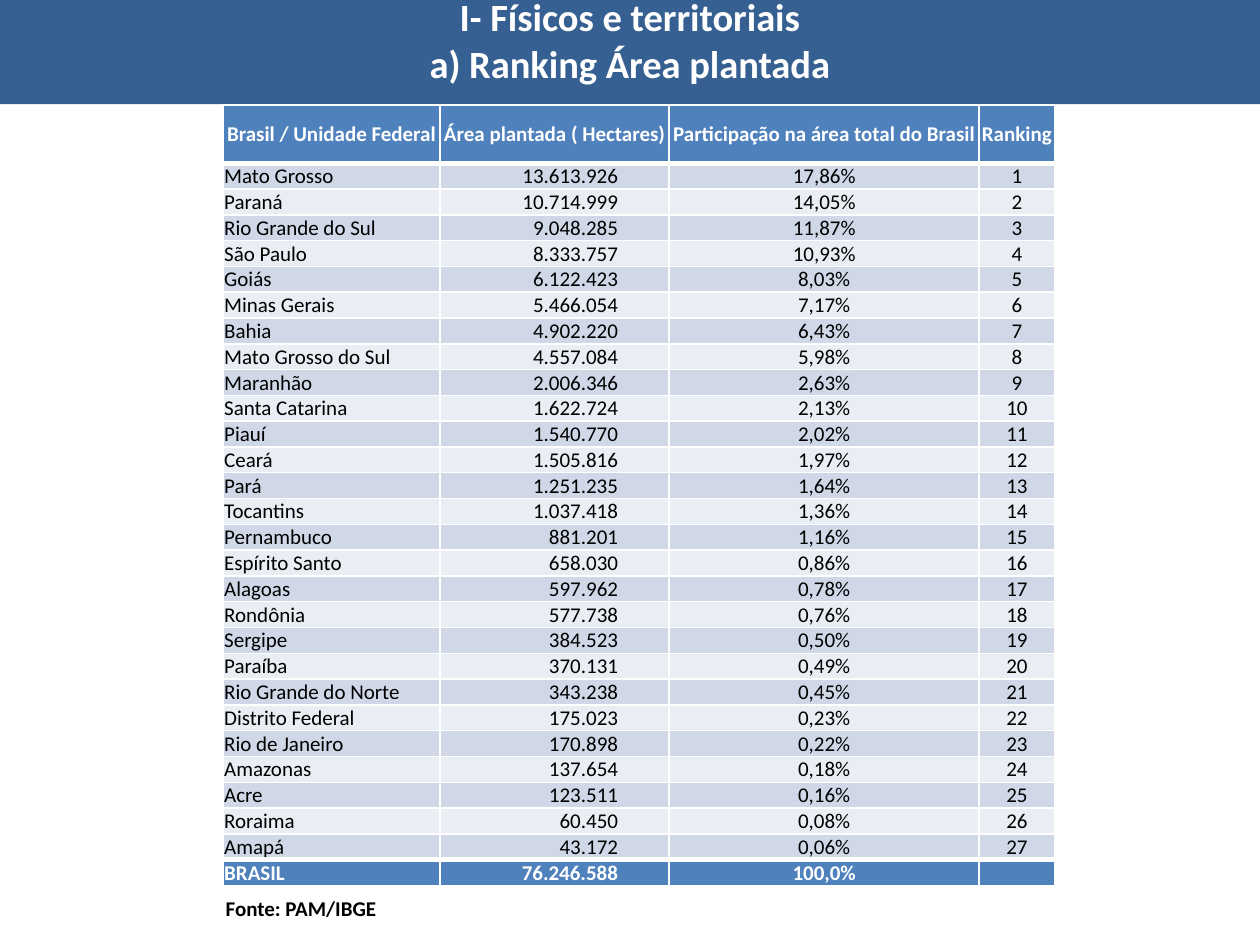
import lxml.etree
import pptx
import pptx.dml.color
import pptx.enum.shapes
import pptx.enum.text
import pptx.oxml.ns
import pptx.util

Cm = pptx.util.Cm
Pt = pptx.util.Pt
Align = pptx.enum.text.PP_ALIGN
Anchor = pptx.enum.text.MSO_ANCHOR
qn = pptx.oxml.ns.qn

colors = {
    "banner": "376092",
    "accent": "4F81BD",
    "odd": "D0D8E8",
    "even": "E9EDF4",
    "white": "FFFFFF",
    "black": "000000",
}

headers = ["Brasil / Unidade Federal", "Área plantada ( Hectares)",
           "Participação na área total do Brasil", "Ranking"]
states = [
    ("Mato Grosso", "13.613.926", "17,86%"),
    ("Paraná", "10.714.999", "14,05%"),
    ("Rio Grande do Sul", "9.048.285", "11,87%"),
    ("São Paulo", "8.333.757", "10,93%"),
    ("Goiás", "6.122.423", "8,03%"),
    ("Minas Gerais", "5.466.054", "7,17%"),
    ("Bahia", "4.902.220", "6,43%"),
    ("Mato Grosso do Sul", "4.557.084", "5,98%"),
    ("Maranhão", "2.006.346", "2,63%"),
    ("Santa Catarina", "1.622.724", "2,13%"),
    ("Piauí", "1.540.770", "2,02%"),
    ("Ceará", "1.505.816", "1,97%"),
    ("Pará", "1.251.235", "1,64%"),
    ("Tocantins", "1.037.418", "1,36%"),
    ("Pernambuco", "881.201", "1,16%"),
    ("Espírito Santo", "658.030", "0,86%"),
    ("Alagoas", "597.962", "0,78%"),
    ("Rondônia", "577.738", "0,76%"),
    ("Sergipe", "384.523", "0,50%"),
    ("Paraíba", "370.131", "0,49%"),
    ("Rio Grande do Norte", "343.238", "0,45%"),
    ("Distrito Federal", "175.023", "0,23%"),
    ("Rio de Janeiro", "170.898", "0,22%"),
    ("Amazonas", "137.654", "0,18%"),
    ("Acre", "123.511", "0,16%"),
    ("Roraima", "60.450", "0,08%"),
    ("Amapá", "43.172", "0,06%"),
]
rows = [headers]
rows += [[*state, str(rank)] for rank, state in enumerate(states, 1)]
rows.append(["BRASIL", "76.246.588", "100,0%", ""])


def write(frame, text, size, color, bold, alignment):
    para = frame.paragraphs[0]
    para.text = text
    para.alignment = alignment
    for span in para.runs:
        for name, value in {"name": "Calibri", "size": Pt(size), "bold": bold}.items():
            setattr(span.font, name, value)
        span.font.color.rgb = pptx.dml.color.RGBColor.from_string(colors[color])


def paint(fill, color):
    fill.solid()
    fill.fore_color.rgb = pptx.dml.color.RGBColor.from_string(colors[color])


deck = pptx.Presentation()
deck.slide_width = Cm(25.4)
deck.slide_height = Cm(19.05)
page = deck.slides.add_slide(deck.slide_layouts[6])

banner = page.shapes.add_shape(
    pptx.enum.shapes.MSO_SHAPE.RECTANGLE, Cm(0), Cm(-0.5), Cm(25.4), Cm(2.6))
banner.shadow.inherit = False
banner.line.fill.background()
paint(banner.fill, "banner")
banner.text_frame.vertical_anchor = Anchor.MIDDLE
write(banner.text_frame, "I- Físicos e territoriais\va) Ranking Área plantada",
      22, "white", True, Align.CENTER)

source_box = page.shapes.add_textbox(Cm(4.3), Cm(17.93), Cm(3.68), Cm(0.77))
source_box.text_frame.word_wrap = False
write(source_box.text_frame, "Fonte: PAM/IBGE", 12, "black", True, Align.LEFT)

table = page.shapes.add_table(
    len(rows), len(headers), Cm(4.5), Cm(2.12), Cm(16.76), Cm(15.73)).table
table.last_row = True
for column, width in zip(table.columns, [4.37, 4.62, 6.25, 1.52]):
    column.width = Cm(width)

last = len(rows) - 1
alignments = [Align.LEFT, Align.RIGHT, Align.CENTER, Align.CENTER]
for r, row in enumerate(rows):
    table.rows[r].height = Cm(0.52 if r else 1.17)
    strong = r in (0, last)
    fill_color = "accent" if strong else "odd" if r % 2 else "even"
    top = 3 if r in (1, last) else 1
    bottom = 3 if r in (0, last - 1) else 1
    for c, text in enumerate(row):
        cell = table.cell(r, c)
        is_area = c == 1 and r > 0
        layout = {
            "vertical_anchor": Anchor.MIDDLE,
            "margin_left": Cm(0.02),
            "margin_right": Cm(1.03 if is_area else 0.02),
            "margin_top": Cm(0.01),
            "margin_bottom": Cm(0),
        }
        for name, value in layout.items():
            setattr(cell, name, value)
        write(cell.text_frame, text, 12, "white" if strong else "black", strong,
              alignments[c] if r else Align.CENTER)
        if not text:
            para = cell.text_frame.paragraphs[0]
            lxml.etree.SubElement(para._p, qn("a:endParaRPr"), sz="1200")
        properties = cell._tc.get_or_add_tcPr()
        for side, width in {"L": 1, "R": 1, "T": top, "B": bottom}.items():
            border = lxml.etree.SubElement(properties, qn(f"a:ln{side}"), w=str(Pt(width)))
            solid = lxml.etree.SubElement(border, qn("a:solidFill"))
            lxml.etree.SubElement(solid, qn("a:srgbClr"), val=colors["white"])
        paint(cell.fill, fill_color)

deck.save("out.pptx")
